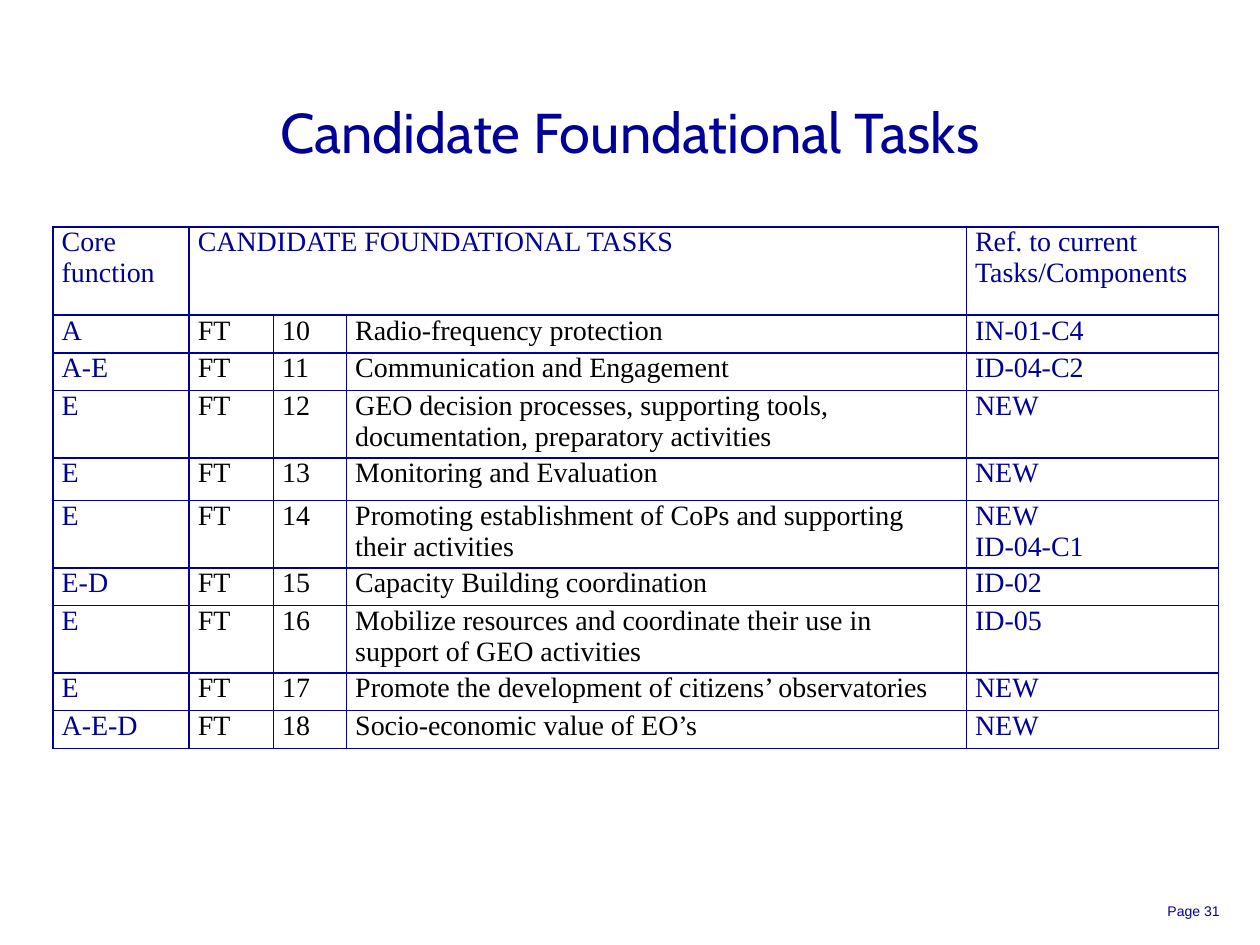
from pptx import Presentation
from pptx.dml.color import RGBColor
from pptx.enum.text import MSO_ANCHOR as Anchor, PP_ALIGN as Align
from pptx.oxml.ns import qn
from pptx.util import Inches, Pt
from lxml.etree import SubElement

COLORS = {"navy": "000098", "black": "000000"}

COLUMN_WIDTHS = [1.08, 0.67, 0.58, 4.92, 2]
COLUMN_COLORS = ["navy", "black", "black", "black", "navy"]
HEADER = ["Core function", "CANDIDATE FOUNDATIONAL TASKS", None, None,
          "Ref. to current Tasks/Components"]
HEADER_HEIGHT, ROW_HEIGHT, TALL_ROW_HEIGHT = 0.7, 0.3, 0.34
TALL_TASK = 13
FIRST_TASK = 10

# Core function, task, references to current tasks
TASKS = [
    ("A", "Radio-frequency protection", "IN-01-C4"),
    ("A-E", "Communication and Engagement", "ID-04-C2"),
    ("E", "GEO decision processes, supporting tools, documentation, "
          "preparatory activities", "NEW"),
    ("E", "Monitoring and Evaluation", "NEW"),
    ("E", "Promoting establishment of CoPs and supporting their activities",
     "NEW\nID-04-C1"),
    ("E-D", "Capacity Building coordination", "ID-02"),
    ("E", "Mobilize resources and coordinate their use in support of "
          "GEO activities", "ID-05"),
    ("E", "Promote the development of citizens’ observatories", "NEW"),
    ("A-E-D", "Socio-economic value of EO’s", "NEW"),
]


def write_text(frame, text, font_name, size, color, align=Align.LEFT):
    """Write each line of the text as a paragraph of one run."""
    for index, line in enumerate(text.split("\n")):
        paragraph = frame.add_paragraph() if index else frame.paragraphs[0]
        paragraph.alignment = align
        run = paragraph.add_run()
        run.text = line
        run.font.name = font_name
        run.font.size = Pt(size)
        run.font.color.rgb = RGBColor.from_string(COLORS[color])


def add_label(slide, box, text, font_name, size, align):
    shape = slide.shapes.add_textbox(*map(Inches, box))
    frame = shape.text_frame
    frame.word_wrap = True
    frame.vertical_anchor = Anchor.MIDDLE
    write_text(frame, text, font_name, size, "navy", align)


def add_borders(cell, color, width):
    properties = cell._tc.get_or_add_tcPr()
    for side in ("a:lnL", "a:lnR", "a:lnT", "a:lnB"):
        line = SubElement(properties, qn(side), w=str(Pt(width)))
        fill = SubElement(line, qn("a:solidFill"))
        SubElement(fill, qn("a:srgbClr"), val=COLORS[color])


def format_cell(cell):
    add_borders(cell, "navy", 1)
    cell.fill.background()
    cell.margin_left = cell.margin_right = Inches(0.07)
    cell.margin_top = cell.margin_bottom = 0


def add_task_table(slide, box):
    rows = [HEADER] + [
        (function, "FT", str(number), task, reference)
        for number, (function, task, reference) in enumerate(TASKS, FIRST_TASK)
    ]
    frame = slide.shapes.add_table(len(rows), len(COLUMN_WIDTHS),
                                   *map(Inches, box))
    table = frame.table
    table.first_row = table.horz_banding = False

    # Column and row sizes
    for column, width in zip(table.columns, COLUMN_WIDTHS):
        column.width = Inches(width)
    for row in table.rows:
        row.height = Inches(ROW_HEIGHT)
    table.rows[0].height = Inches(HEADER_HEIGHT)
    table.rows[TALL_TASK - FIRST_TASK + 1].height = Inches(TALL_ROW_HEIGHT)

    # The task heading spans label, number and task
    table.cell(0, 1).merge(table.cell(0, 3))

    # Cell contents
    for row_index, values in enumerate(rows):
        for column_index, value in enumerate(values):
            cell = table.cell(row_index, column_index)
            format_cell(cell)
            if value:
                color = COLUMN_COLORS[column_index] if row_index else "navy"
                write_text(cell.text_frame, value, "Times New Roman", 16, color)


def main():
    presentation = Presentation()
    presentation.slide_width = Inches(10)
    presentation.slide_height = Inches(7.5)
    slide = presentation.slides.add_slide(presentation.slide_layouts[6])

    add_label(slide, (7.7, 7.11, 2.08, 0.24), "Page 31", "Arial", 8, Align.RIGHT)
    add_label(slide, (0.75, 0.75, 8.5, 0.58), "Candidate Foundational Tasks",
              "Cabin", 32, Align.CENTER)
    add_task_table(slide, (0.42, 1.8, 9.25, 3.44))

    presentation.save("out.pptx")


if __name__ == "__main__":
    main()
